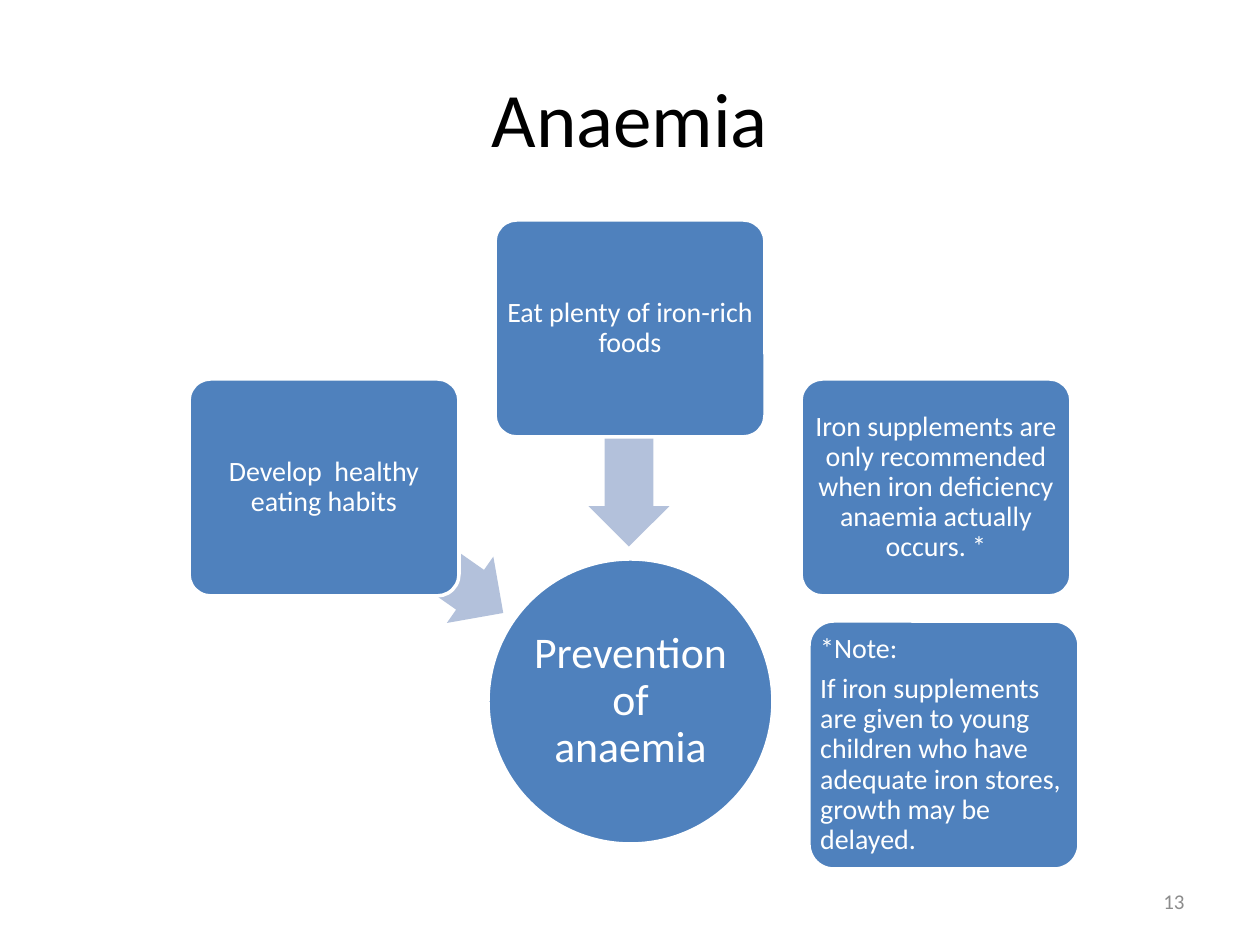
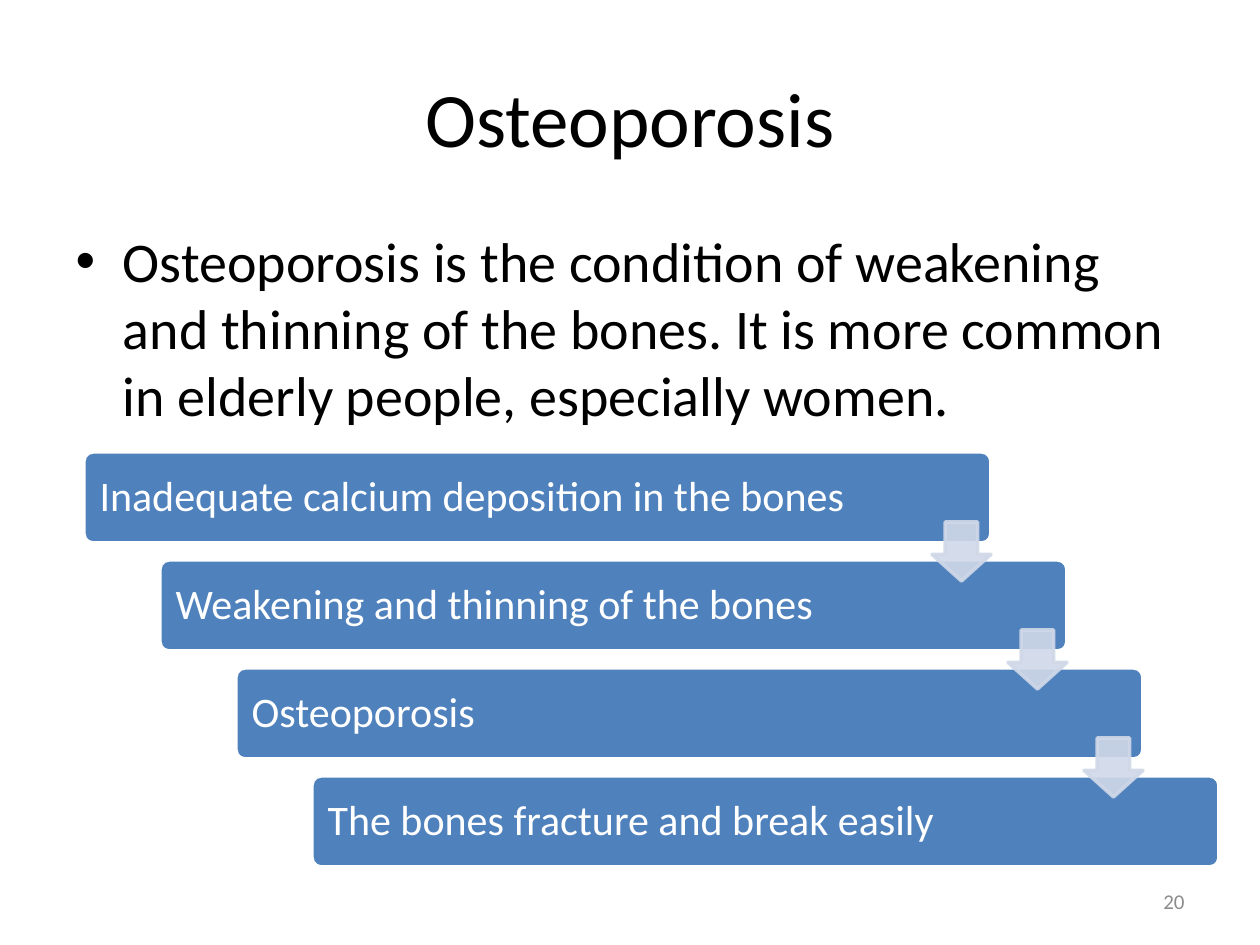
from lxml import etree
from pptx import Presentation
from pptx.dml.color import RGBColor
from pptx.enum.shapes import MSO_SHAPE
from pptx.enum.text import MSO_ANCHOR, MSO_AUTO_SIZE, PP_ALIGN
from pptx.oxml.ns import qn
from pptx.util import Emu, Pt

CARD = MSO_SHAPE.ROUNDED_RECTANGLE
CIRCLE = MSO_SHAPE.OVAL
LEFT_ARROW = MSO_SHAPE.LEFT_ARROW
DOWN_ARROW = MSO_SHAPE.DOWN_ARROW
LEFT, CENTER, RIGHT = PP_ALIGN.LEFT, PP_ALIGN.CENTER, PP_ALIGN.RIGHT
TOP, MIDDLE = MSO_ANCHOR.TOP, MSO_ANCHOR.MIDDLE
NO_AUTOFIT = MSO_AUTO_SIZE.NONE

EMU_PER_PX = 914400 / 126
FONT = "Calibri"
COLORS = {
    "ink": "000000",
    "paper": "FFFFFF",
    "block": "4F81BD",
    "pointer": "B3C1DB",
    "step_arrow": "D0D8E8",
    "number": "8C8C8C",
}
TITLE_ONLY, TITLE_AND_BODY = 5, 1


def px(length):
    return Emu(round(length * EMU_PER_PX))


def rgb(name):
    return RGBColor.from_string(COLORS[name])


class Deck:
    def __init__(self):
        self.prs = Presentation()
        self.prs.slide_width, self.prs.slide_height = px(1260), px(945)
        self.slide = None

    def new_slide(self, layout, title, number):
        self.slide = self.prs.slides.add_slide(self.prs.slide_layouts[layout])
        heading = self.slide.shapes.title
        self.place(heading, 63, 38, 1134, 158)
        self.set_text(heading, title, 44, "ink", CENTER, MIDDLE)
        page = self.slide.shapes.add_textbox(px(903), px(876), px(294), px(50))
        self.set_text(page, number, 12, "number", RIGHT, MIDDLE)

    def place(self, target, left, top, width, height):
        target.left, target.top = px(left), px(top)
        target.width, target.height = px(width), px(height)

    def set_text(self, target, text, size, color, align, anchor):
        frame = target.text_frame
        frame.text = text
        frame.word_wrap = True
        frame.auto_size = NO_AUTOFIT
        frame.vertical_anchor = anchor
        for paragraph in frame.paragraphs:
            paragraph.alignment = align
            for run in paragraph.runs:
                run.font.name = FONT
                run.font.size = Pt(size)
                run.font.color.rgb = rgb(color)

    def body(self, text):
        bullets = self.slide.placeholders[1]
        self.place(bullets, 63, 220, 1134, 624)
        self.set_text(bullets, text, 32, "ink", LEFT, TOP)

    def shape(self, kind, box, fill, line=None, adjustments=()):
        item = self.slide.shapes.add_shape(kind, *map(px, box))
        item.shadow.inherit = False
        item.fill.solid()
        item.fill.fore_color.rgb = rgb(fill)
        if line:
            item.line.color.rgb = rgb(line)
            item.line.width = Pt(2)
        else:
            item.line.fill.background()
        for index, value in enumerate(adjustments):
            item.adjustments[index] = value
        return item

    def block(self, box, text, size, inset, align=CENTER, kind=CARD):
        adjustments = (0.1,) if kind == CARD else ()
        item = self.shape(kind, box, "block", "paper", adjustments)
        self.set_text(item, text, size, "paper", align, MIDDLE)
        frame = item.text_frame
        frame.margin_left = frame.margin_right = px(inset)
        frame.margin_top = frame.margin_bottom = px(inset)
        for paragraph in frame.paragraphs:
            paragraph.line_spacing = 0.9
            paragraph.space_after = Pt(round(0.35 * size, 1))

    def pointer(self, left, top, rotation):
        arrow = self.shape(LEFT_ARROW, (left, top, 218, 81), "pointer", adjustments=(0.6, 0.5))
        arrow.rotation = rotation

    def step_arrow(self, left, top):
        arrow = self.shape(DOWN_ARROW, (left, top, 59, 59), "step_arrow", "step_arrow", (0.55, 0.45))
        for color in list(arrow.element.iter(qn("a:srgbClr"))):
            etree.SubElement(color, qn("a:alpha")).set("val", "90000")


def anaemia(deck):
    deck.new_slide(TITLE_ONLY, "Anaemia", "13")
    deck.block((488, 559, 285, 285), "Prevention of anaemia", 25, 3, kind=CIRCLE)
    deck.pointer(305, 510, 215)
    deck.pointer(520, 397, 270)
    measures = [
        (379, "Develop  healthy eating habits"),
        (220, "Eat plenty of iron-rich foods"),
        (379, "Iron supplements are only recommended when iron deficiency anaemia actually occurs. *"),
    ]
    for column, (top, measure) in enumerate(measures):
        deck.block((189 + 306 * column, top, 270, 217), measure, 16, 4)
    note = (
        "*Note:\nIf iron supplements are given to young children who have "
        "adequate iron stores, growth may be delayed."
    )
    deck.block((809, 621, 270, 248), note, 16, 4, LEFT)


def osteoporosis(deck):
    deck.new_slide(TITLE_AND_BODY, "Osteoporosis", "20")
    deck.body(
        "Osteoporosis is the condition of weakening and thinning of the bones. "
        "It is more common in elderly people, especially women."
    )
    stages = [
        "Inadequate calcium deposition in the bones",
        "Weakening and thinning of the bones",
        "Osteoporosis",
        "The bones fracture and break easily",
    ]
    offsets = [(76 * index, 108 * index) for index in range(len(stages))]
    for (across, down), stage in zip(offsets, stages):
        deck.block((84 + across, 452 + down, 907, 91), stage, 24, 13, LEFT)
    for across, down in offsets[:-1]:
        deck.step_arrow(932 + across, 522 + down)


def main():
    deck = Deck()
    anaemia(deck)
    osteoporosis(deck)
    deck.prs.save("out.pptx")


if __name__ == "__main__":
    main()
